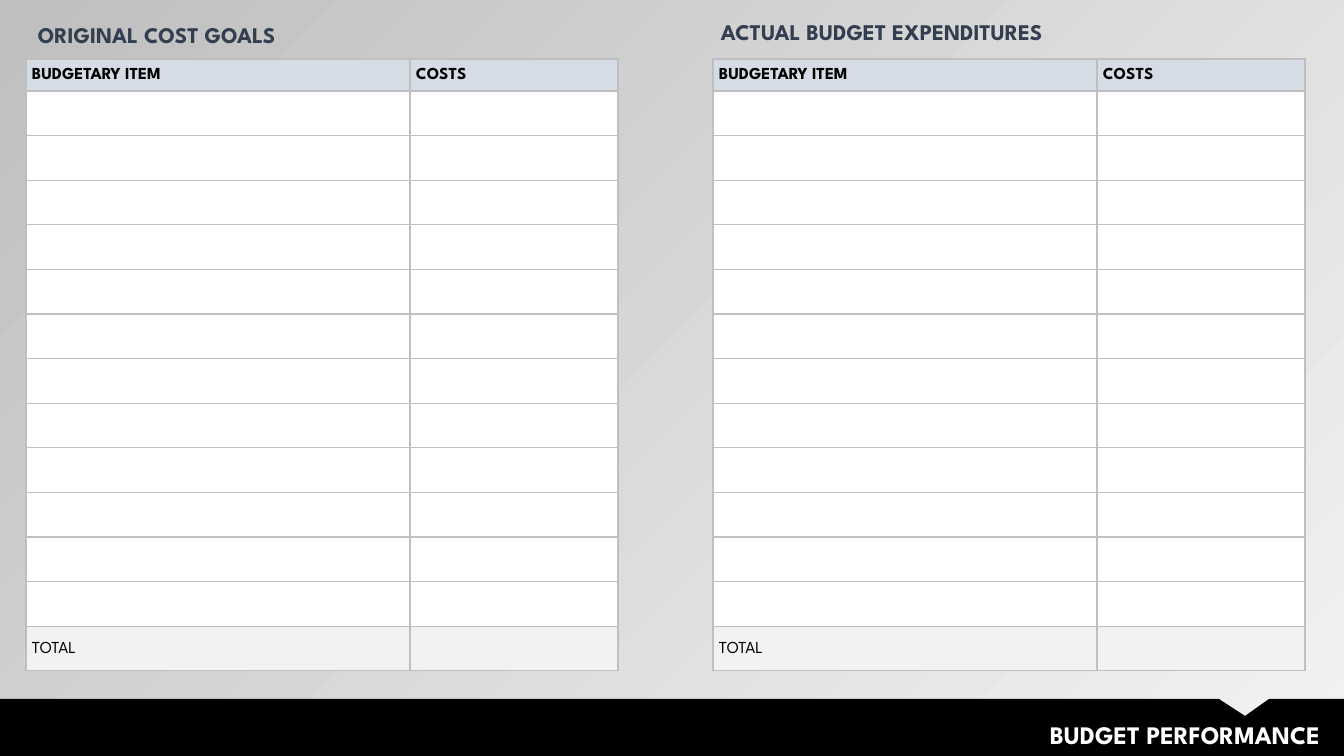
from pptx import Presentation, util as u
from pptx.dml.color import RGBColor
from pptx.enum import text as t
from pptx.oxml import parse_xml
from pptx.oxml.ns import nsdecls

FONT = "League Spartan"
ROWS = 14


def px(n):
    return round(n * 914400 / 100.8)


def hue(code):
    return RGBColor.from_string(code)


def paint(fill, code):
    fill.solid()
    fill.fore_color.rgb = hue(code)


def assign(obj, vals):
    for key, val in vals.items():
        setattr(obj, key, val)


def write(frame, words, size, code, bold, form):
    par = frame.paragraphs[0]
    assign(par, form)
    run = par.add_run()
    run.text = words
    assign(run.font, {"name": FONT, "size": u.Pt(size), "bold": bold})
    run.font.color.rgb = hue(code)


def label(slide, words, box, size, code, pad, form):
    frame = slide.shapes.add_textbox(*map(px, box)).text_frame
    side, edge = map(px, pad)
    assign(frame, {"word_wrap": True,
                   "auto_size": t.MSO_AUTO_SIZE.SHAPE_TO_FIT_TEXT,
                   "margin_left": side, "margin_right": side,
                   "margin_top": edge, "margin_bottom": edge})
    write(frame, words, size, code, True, form)


def border(cell, code):
    props = cell._tc.get_or_add_tcPr()
    for i, side in enumerate("LRTB"):
        props.insert(i, parse_xml(
            f'<a:ln{side} {nsdecls("a")} w="12700"><a:solidFill>'
            f'<a:srgbClr val="{code}"/></a:solidFill></a:ln{side}>'))


def budget(slide, left):
    head, body = px(32), px(580) // (ROWS - 1)
    grid = slide.shapes.add_table(
        ROWS, 2, px(left), px(59), px(592), px(612)).table
    assign(grid, {"first_row": False, "horz_banding": False})
    for col, wide in zip(grid.columns, (384, 208)):
        col.width = px(wide)

    # Header, blank entries, total
    words = {(0, 0): "BUDGETARY ITEM", (0, 1): "COSTS", (ROWS - 1, 0): "TOTAL"}
    fills = {0: "D6DCE5", ROWS - 1: "F2F2F2"}
    for r, row in enumerate(grid.rows):
        row.height = body if r else head
        for c, cell in enumerate(row.cells):
            assign(cell, {"vertical_anchor": t.MSO_ANCHOR.MIDDLE,
                          "margin_left": px(6), "margin_right": px(6),
                          "margin_top": 0, "margin_bottom": 0})
            paint(cell.fill, fills.get(r, "FFFFFF"))
            border(cell, "BFBFBF")
            if (r, c) in words:
                write(cell.text_frame, words[r, c], 12, "000000", r == 0,
                      {"line_spacing": 1.07})


def footer(slide):
    # Black band with a notch
    pts = [(1219, 699), (1245, 716), (1269, 699), (1344, 699),
           (1344, 756), (0, 756)]
    pen = slide.shapes.build_freeform(0, px(699), scale=1.0)
    pen.add_line_segments([(px(x), px(y)) for x, y in pts], close=True)
    band = pen.convert_to_shape()
    band.shadow.inherit = False
    paint(band.fill, "000000")
    band.line.fill.background()
    label(slide, "BUDGET PERFORMANCE", (417, 714, 913, 40), 18, "FFFFFF",
          (10, 5), {"alignment": t.PP_ALIGN.RIGHT})


def backdrop(slide):
    fill = slide.background.fill
    fill.gradient()
    fill.gradient_angle = 135
    for stop, code in zip(fill.gradient_stops, ("F2F2F2", "BFBFBF")):
        stop.color.rgb = hue(code)
    # Light end is 40% opaque
    light = slide._element.xpath(".//a:gs/a:srgbClr")[0]
    light.append(parse_xml(f'<a:alpha {nsdecls("a")} val="40000"/>'))


def main():
    deck = Presentation()
    assign(deck, {"slide_width": px(1344), "slide_height": px(756)})
    slide = deck.slides.add_slide(deck.slide_layouts[6])
    backdrop(slide)
    footer(slide)

    # Headings and tables
    form = {"line_spacing": u.Pt(21.5), "space_before": u.Pt(3)}
    for words, x, y, left in (("ORIGINAL COST GOALS", 26, 12, 26),
                              ("ACTUAL BUDGET EXPENDITURES", 709, 9, 713)):
        label(slide, words, (x, y, 562, 40), 16, "333F50", (12, 6), form)
        budget(slide, left)
    deck.save("out.pptx")


if __name__ == "__main__":
    main()
